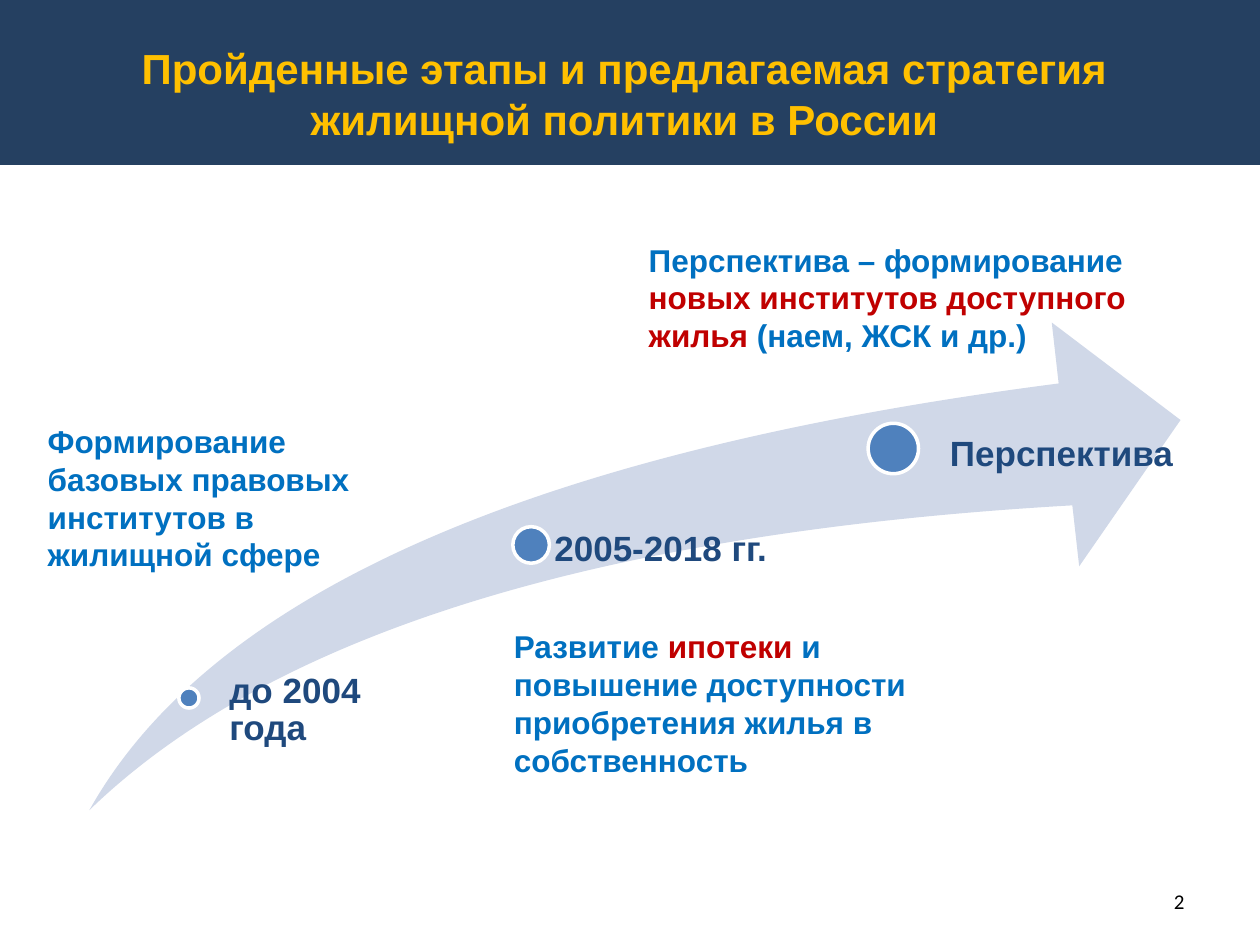
"""Build a slide on the stages of housing policy along a rising arrow."""
from pptx import Presentation
from pptx.dml.color import RGBColor
from pptx.enum import shapes, text
from pptx.util import Inches, Pt

COLORS = {
    "band": "254061", "title": "FFC000", "arrow": "D0D8E8", "dot": "4F81BD",
    "white": "FFFFFF", "stage": "1F497D", "note": "0070C0",
    "accent": "C00000", "black": "000000",
}
TITLE = {"size": Pt(24), "bold": True, "name": "Arial"}
STAGE = {"size": Pt(20), "bold": True, "name": "Arial"}
NOTE = {"size": Pt(18), "bold": True, "name": "Arial"}
NUMBER = {"size": Pt(12), "bold": False, "name": "Calibri"}

STAGES = [
    ("до 2004 года", (0.71, 2.9, 0.16), (1.02, 2.78, 1.44, 1.12), 0.09),
    ("2005-2018 гг.", (3.36, 1.62, 0.29), (3.54, 1.66, 1.87, 2.24), 0.15),
    ("Перспектива", (6.18, 0.8, 0.4), (6.62, 0.9, 2, 0.8), 0.21),
]
NOTES = [
    ((0.28, 3.3, 2.68, 1.31),
     [("Формирование базовых правовых институтов в жилищной сфере", "note")]),
    ((3.98, 4.93, 3.94, 1.31),
     [("Развитие ", "note"), ("ипотеки", "accent"),
      (" и повышение доступности приобретения жилья в собственность", "note")]),
    ((5.05, 1.86, 4.02, 1.01),
     [("Перспектива – формирование ", "note"),
      ("новых институтов доступного жилья ", "accent"),
      ("(наем, ЖСК и др.)", "note")]),
]


def color(name):
    """Return the named palette colour."""
    return RGBColor.from_string(COLORS[name])


def set_attributes(target, values):
    """Set every attribute in a dict of format values."""
    for name, value in values.items():
        setattr(target, name, value)


def inside(box, part):
    """Shift a part's position by the origin of its box."""
    return (box[0] + part[0], box[1] + part[1], *part[2:])


def add_shape(slide, kind, box, fill, line=None):
    """Add a flat preset shape with an optional outline."""
    shape = slide.shapes.add_shape(kind, *map(Inches, box))
    shape.shadow.inherit = False
    shape.fill.solid()
    shape.fill.fore_color.rgb = color(fill)
    if line:
        shape.line.color.rgb = color(line)
        shape.line.width = Pt(2)
    else:
        shape.line.fill.background()
    return shape


def add_text(slide, box, runs, font, paragraph_format=None, frame_format=None):
    """Add a wrapped text box with one paragraph of coloured runs."""
    frame = slide.shapes.add_textbox(*map(Inches, box)).text_frame
    set_attributes(frame, {"word_wrap": True, **(frame_format or {})})
    paragraph = frame.paragraphs[0]
    set_attributes(paragraph, paragraph_format or {})
    for words, color_name in runs:
        run = paragraph.add_run()
        run.text = words
        set_attributes(run.font, font)
        run.font.color.rgb = color(color_name)


def add_header(slide, box):
    """Add the title band and its centred title."""
    add_shape(slide, shapes.MSO_SHAPE.RECTANGLE, box, "band")
    title = "Пройденные этапы и предлагаемая стратегия жилищной политики в России"
    add_text(slide, inside(box, (0.35, 0.29, 9.21, 1.21)), [(title, "title")],
             TITLE, {"alignment": text.PP_ALIGN.CENTER})


def add_timeline(slide, box):
    """Add the swoosh arrow with its dots and stage labels."""
    arrow = add_shape(slide, shapes.MSO_SHAPE.SWOOSH_ARROW, box, "arrow")
    for index in range(2):
        arrow.adjustments[index] = 0.25
    for label, (left, top, size), label_box, inset in STAGES:
        add_shape(slide, shapes.MSO_SHAPE.OVAL,
                  inside(box, (left, top, size, size)), "dot", "white")
        add_text(slide, inside(box, label_box), [(label, "stage")], STAGE,
                 {"line_spacing": 0.9},
                 {"margin_left": Inches(inset), "margin_top": 0,
                  "margin_right": 0, "margin_bottom": 0})


def add_notes(slide):
    """Add the explanation of each stage."""
    for box, runs in NOTES:
        add_text(slide, box, runs, NOTE)


def add_number(slide, box):
    """Add the slide number."""
    add_text(slide, box, [("2", "black")], NUMBER,
             {"alignment": text.PP_ALIGN.RIGHT},
             {"vertical_anchor": text.MSO_ANCHOR.MIDDLE})


def main():
    """Build and save the presentation."""
    presentation = Presentation()
    set_attributes(presentation, {"slide_width": Inches(10),
                                  "slide_height": Inches(7.5)})
    slide = presentation.slides.add_slide(presentation.slide_layouts[6])
    add_header(slide, (0, 0, 10, 1.31))
    add_number(slide, (7.17, 6.95, 2.33, 0.4))
    add_timeline(slide, (0.71, 2.56, 8.66, 3.87))
    add_notes(slide)
    presentation.save("out.pptx")


if __name__ == "__main__":
    main()
